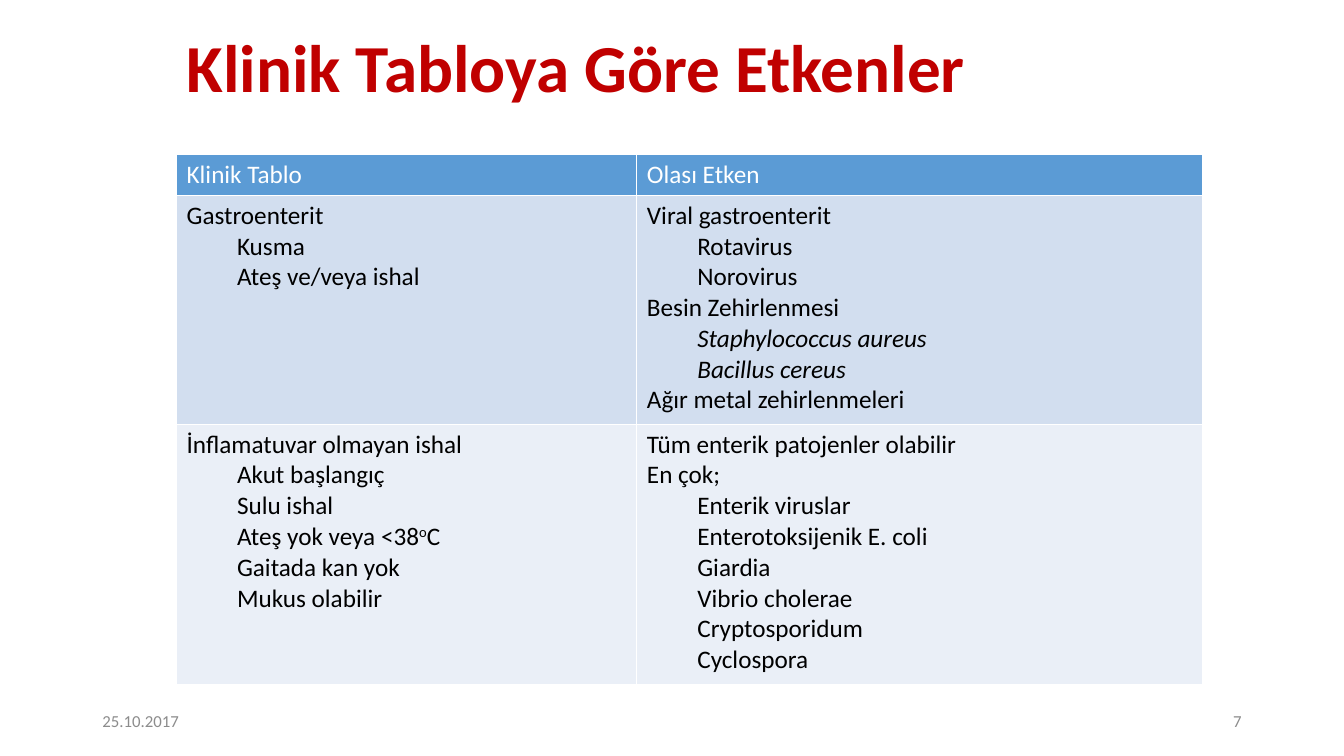
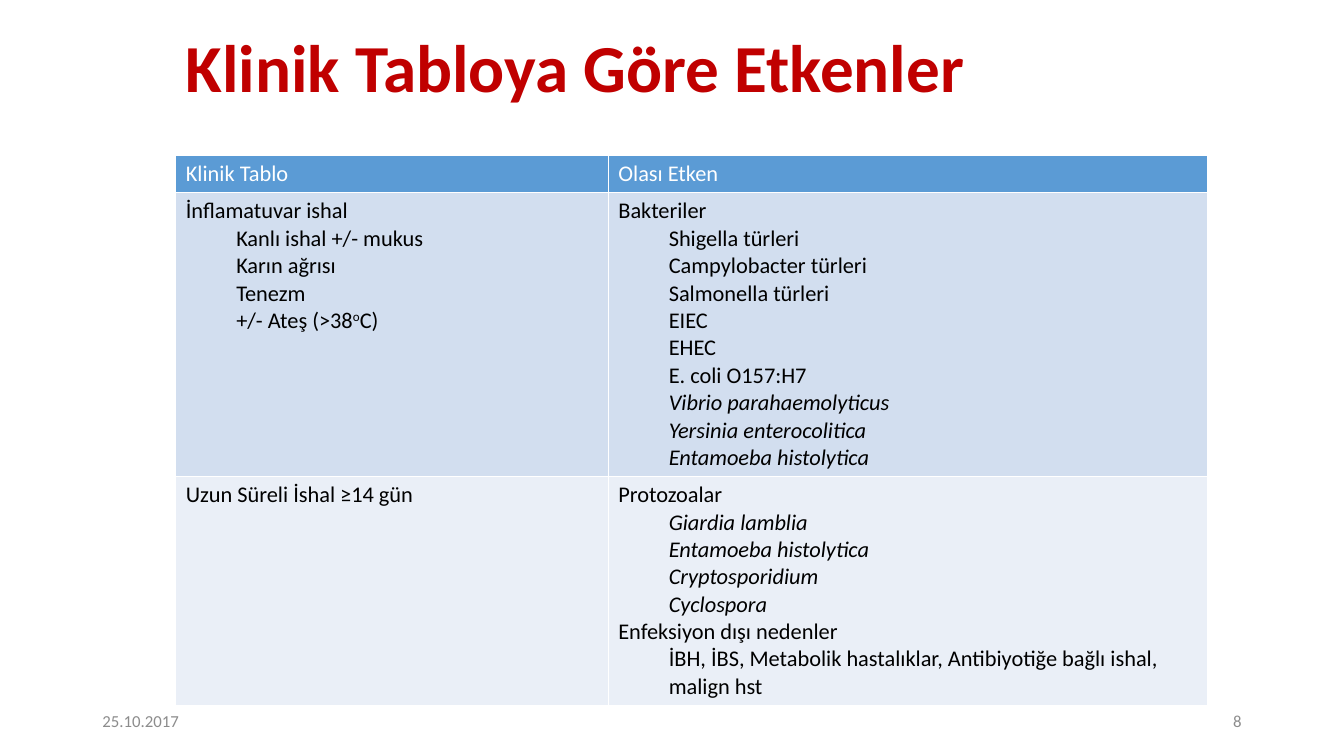
from collections import namedtuple

import pptx
import pptx.dml.color
import pptx.enum.text
import pptx.oxml
import pptx.oxml.ns
import pptx.util
from pptx.util import Cm

RGBColor = pptx.dml.color.RGBColor
Pt = pptx.util.Pt
ANCHOR = pptx.enum.text.MSO_ANCHOR
ALIGN = pptx.enum.text.PP_ALIGN

TITLE_RED = RGBColor(0xC0, 0x00, 0x00)
HEADER_BLUE = RGBColor(0x5B, 0x9B, 0xD5)
BAND_DARK = RGBColor(0xD2, 0xDE, 0xEF)
BAND_LIGHT = RGBColor(0xEA, 0xEF, 0xF7)
WHITE = RGBColor(0xFF, 0xFF, 0xFF)
BLACK = RGBColor(0x00, 0x00, 0x00)
FOOTER_GREY = RGBColor(0x8C, 0x8C, 0x8C)

FONT = "Calibri"
TITLE = "Klinik Tabloya Göre Etkenler"
DATE = "25.10.2017"
HEADERS = ("Klinik Tablo", "Olası Etken")
INDENT = Cm(1.27)

Box = namedtuple("Box", "left top width height")
Line = namedtuple("Line", "text level italic")


def heads(*texts):
    return [Line(text, 0, False) for text in texts]


def items(*texts):
    return [Line(text, 1, False) for text in texts]


def species(*texts):
    return [Line(text, 1, True) for text in texts]


ACUTE_ROWS = [
    (
        heads("Gastroenterit") + items("Kusma", "Ateş ve/veya ishal"),
        heads("Viral gastroenterit")
        + items("Rotavirus", "Norovirus")
        + heads("Besin Zehirlenmesi")
        + species("Staphylococcus aureus", "Bacillus cereus")
        + heads("Ağır metal zehirlenmeleri"),
    ),
    (
        heads("İnflamatuvar olmayan ishal")
        + items("Akut başlangıç", "Sulu ishal", "Ateş yok veya <38^o^C",
                "Gaitada kan yok", "Mukus olabilir"),
        heads("Tüm enterik patojenler olabilir", "En çok;")
        + items("Enterik viruslar", "Enterotoksijenik E. coli", "Giardia",
                "Vibrio cholerae", "Cryptosporidum", "Cyclospora"),
    ),
]

INFLAMMATORY_ROWS = [
    (
        heads("İnflamatuvar ishal")
        + items("Kanlı ishal +/- mukus", "Karın ağrısı", "Tenezm",
                "+/- Ateş (>38^o^C)"),
        heads("Bakteriler")
        + items("Shigella türleri", "Campylobacter türleri",
                "Salmonella türleri", "EIEC", "EHEC", "E. coli O157:H7")
        + species("Vibrio parahaemolyticus", "Yersinia enterocolitica",
                  "Entamoeba histolytica"),
    ),
    (
        heads("Uzun Süreli İshal ≥14 gün"),
        heads("Protozoalar")
        + species("Giardia lamblia", "Entamoeba histolytica",
                  "Cryptosporidium", "Cyclospora")
        + heads("Enfeksiyon dışı nedenler")
        + items("İBH, İBS, Metabolik hastalıklar, Antibiyotiğe bağlı ishal, "
                "malign hst"),
    ),
]


def style_font(paragraph, size, color, bold=False, italic=False):
    font = paragraph.font
    font.name = FONT
    font.size = Pt(size)
    font.color.rgb = color
    font.bold = bold
    font.italic = italic


def add_text(slide, box, text, size, color, anchor, align=ALIGN.LEFT, bold=False):
    frame = slide.shapes.add_textbox(*box).text_frame
    frame.word_wrap = True
    frame.vertical_anchor = anchor
    paragraph = frame.paragraphs[0]
    paragraph.text = text
    paragraph.alignment = align
    style_font(paragraph, size, color, bold)


def add_footer(slide, box, number):
    width = Cm(7.62)
    date_box = box._replace(width=width)
    number_box = date_box._replace(left=box.left + box.width - width)
    add_text(slide, date_box, DATE, 12, FOOTER_GREY, ANCHOR.MIDDLE)
    add_text(slide, number_box, str(number), 12, FOOTER_GREY, ANCHOR.MIDDLE,
             ALIGN.RIGHT)


def set_borders(cell):
    properties = cell._tc.get_or_add_tcPr()
    for side in ("lnL", "lnR", "lnT", "lnB"):
        properties.append(pptx.oxml.parse_xml(
            f'<a:{side} {pptx.oxml.ns.nsdecls("a")} w="{Pt(1)}">'
            f'<a:solidFill><a:srgbClr val="{WHITE}"/></a:solidFill></a:{side}>'))


def fill_cell(cell, lines, size, color, background):
    set_borders(cell)
    cell.fill.solid()
    cell.fill.fore_color.rgb = background
    frame = cell.text_frame
    for index, line in enumerate(lines):
        paragraph = frame.add_paragraph() if index else frame.paragraphs[0]
        if line.level:
            paragraph.level = line.level
            paragraph._p.get_or_add_pPr().set("marL", str(INDENT))
        for position, part in enumerate(line.text.split("^")):
            run = paragraph.add_run()
            run.text = part
            if position % 2:
                run._r.get_or_add_rPr().set("baseline", "30000")
        style_font(paragraph, size, color, italic=line.italic)


def add_cause_table(slide, box, first_width, row_heights, body, size):
    rows = [[heads(header) for header in HEADERS], *body]
    table = slide.shapes.add_table(len(rows), len(HEADERS), *box).table
    table.columns[0].width = first_width
    table.columns[1].width = box.width - first_width
    backgrounds = (HEADER_BLUE, BAND_DARK, BAND_LIGHT)
    for row_index, (row, height) in enumerate(zip(rows, row_heights)):
        table.rows[row_index].height = height
        color = BLACK if row_index else WHITE
        for column_index, lines in enumerate(row):
            fill_cell(table.cell(row_index, column_index), lines, size, color,
                      backgrounds[row_index])


def add_cause_slide(presentation, number, table_box, first_width, row_heights,
                    body, size):
    slide = presentation.slides.add_slide(presentation.slide_layouts[6])
    title_box = Box(table_box.left, Cm(0.66), Cm(20.65), Cm(2.13))
    add_text(slide, title_box, TITLE, 48, TITLE_RED, ANCHOR.BOTTOM, bold=True)
    add_cause_table(slide, table_box, first_width, row_heights, body, size)
    add_footer(slide, Box(Cm(2.33), Cm(17.65), Cm(29.21), Cm(1.01)), number)


def main():
    presentation = pptx.Presentation()
    presentation.slide_width = Cm(33.87)
    presentation.slide_height = Cm(19.05)
    add_cause_slide(
        presentation, 7, Box(Cm(4.45), Cm(3.9), Cm(25.86), Cm(13.35)),
        Cm(11.6), (Cm(1.02), Cm(5.77), Cm(6.56)), ACUTE_ROWS, 18)
    add_cause_slide(
        presentation, 8, Box(Cm(4.43), Cm(3.92), Cm(26), Cm(13.85)),
        Cm(10.9), (Cm(0.93), Cm(7.15), Cm(5.77)), INFLAMMATORY_ROWS, 16)
    presentation.save("out.pptx")


if __name__ == "__main__":
    main()
